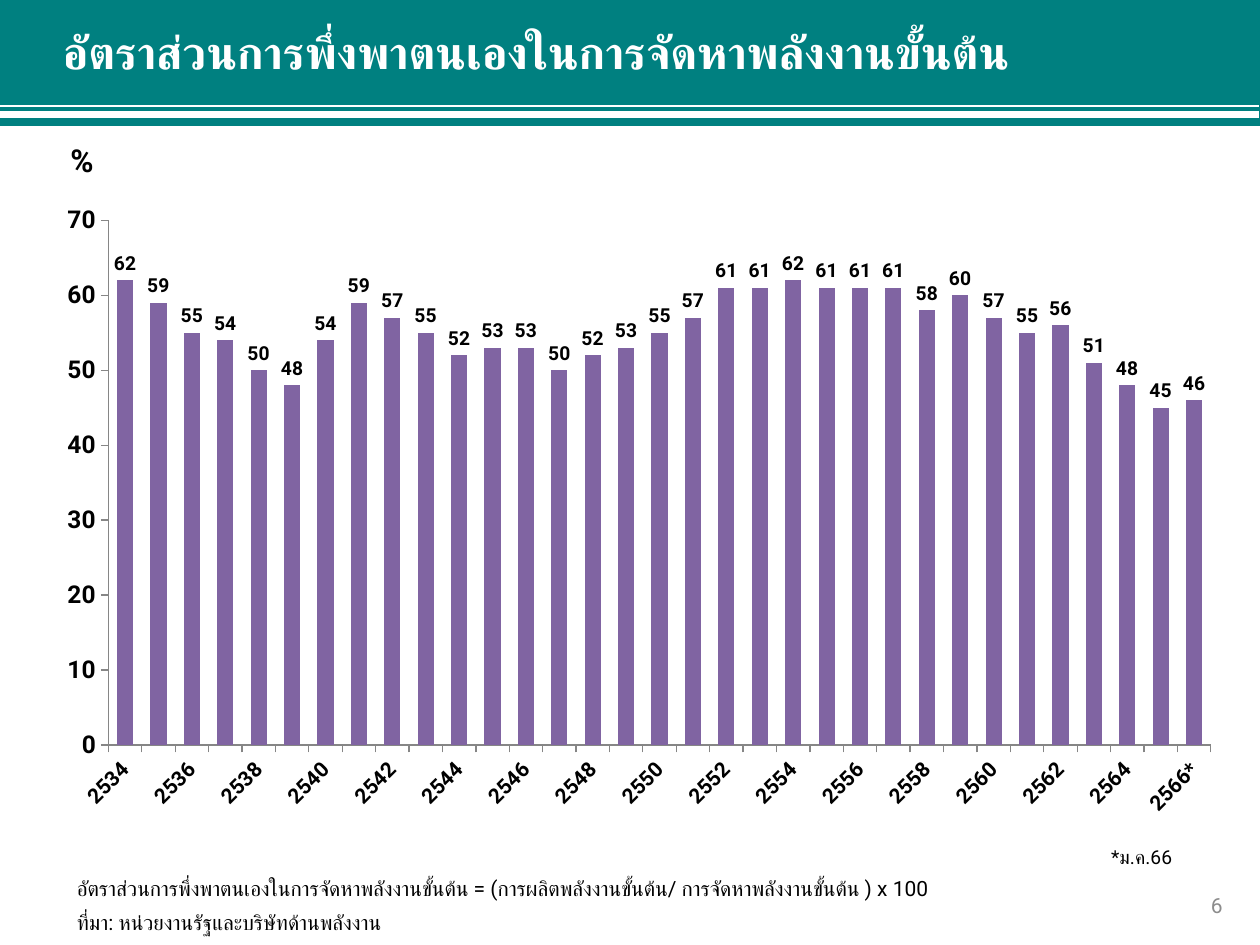
"""Build the slide on self-reliance in primary energy supply."""
from lxml import etree
from pptx import Presentation
from pptx.chart.data import CategoryChartData
from pptx.dml.color import RGBColor
from pptx.enum.chart import XL_CHART_TYPE as ChartType, XL_LABEL_POSITION as LabelPosition
from pptx.enum.chart import XL_TICK_MARK as TickMark
from pptx.enum.shapes import MSO_CONNECTOR as Connector, MSO_SHAPE as Shape
from pptx.enum.text import MSO_ANCHOR as Anchor, MSO_AUTO_SIZE as AutoSize, PP_ALIGN as Align
from pptx.oxml import parse_xml
from pptx.oxml.ns import nsdecls, qn
from pptx.util import Cm, Pt

COLORS = {"teal": "008080", "white": "FFFFFF", "black": "000000",
          "purple": "8064A2", "grey": "8C8C8C", "axis": "868686"}
FONT = "Roboto"


def color(name):
    return RGBColor.from_string(COLORS[name])


def style_font(font, size, name="black", bold=False):
    font.name = FONT
    font.size = Pt(size)
    font.bold = bold
    font.color.rgb = color(name)


presentation = Presentation()
presentation.slide_width = Cm(25.4)
presentation.slide_height = Cm(19.05)
slide = presentation.slides.add_slide(presentation.slide_layouts[6])

header = slide.shapes.add_group_shape()
band = header.shapes.add_shape(Shape.RECTANGLE, Cm(-0.08), Cm(-0.1), Cm(25.48), Cm(2.64))
band.shadow.inherit = False
band.fill.solid()
band.fill.fore_color.rgb = color("teal")
band.line.fill.background()
for y, width in ((2.31, 3.75), (2.13, 1.25)):
    stripe = header.shapes.add_connector(Connector.STRAIGHT, Cm(-0.08), Cm(y), Cm(25.37), Cm(y))
    stripe.line.color.rgb = color("white")
    stripe.line.width = Pt(width)
    etree.SubElement(stripe.element.spPr, qn("a:effectLst"))

ratios = [62, 59, 55, 54, 50, 48, 54, 59, 57, 55, 52, 53, 53, 50, 52, 53, 55,
          57, 61, 61, 62, 61, 61, 61, 58, 60, 57, 55, 56, 51, 48, 45, 46]
chart_data = CategoryChartData(number_format="#,##0")
chart_data.categories = [str(year) for year in range(2534, 2566)] + ["2566*"]
chart_data.add_series("Series 1", ratios)
chart = slide.shapes.add_chart(
    ChartType.COLUMN_CLUSTERED, Cm(0.89), Cm(3.89), Cm(24), Cm(12.85), chart_data).chart
chart.has_legend = False
chart.has_title = False
chart.font.name = "Calibri"
chart.font.size = Pt(18)
chart.font.color.rgb = color("black")

for axis, size in ((chart.category_axis, 12), (chart.value_axis, 14)):
    axis.has_major_gridlines = False
    axis.major_tick_mark = TickMark.OUTSIDE
    axis.minor_tick_mark = TickMark.NONE
    axis.format.line.color.rgb = color("axis")
    style_font(axis.tick_labels.font, size, bold=True)
chart.value_axis.minimum_scale = 0
chart.value_axis.maximum_scale = 70
chart.value_axis.major_unit = 10
chart.value_axis.tick_labels.number_format = "#,##0"
chart.value_axis.tick_labels.number_format_is_linked = False

plot = chart.plots[0]
plot.gap_width = 106
plot.vary_by_categories = False
series = plot.series[0]
series.format.fill.solid()
series.format.fill.fore_color.rgb = color("purple")
labels = series.data_labels
labels.show_value = True
labels.number_format = "#,##0"
labels.number_format_is_linked = False
labels.position = LabelPosition.OUTSIDE_END
style_font(labels.font, 11, bold=True)

category_axis = chart.element.find(".//" + qn("c:catAx"))
category_axis.find(qn("c:txPr")).find(qn("a:bodyPr")).set("rot", "-2700000")
category_axis.find(qn("c:noMultiLvlLbl")).addprevious(
    parse_xml(f'<c:tickLblSkip {nsdecls("c")} val="2"/>'))
plot_area = chart.element.find(".//" + qn("c:plotArea"))
for layout in plot_area.findall(qn("c:layout")):
    plot_area.remove(layout)
layout = etree.Element(qn("c:layout"))
manual = etree.SubElement(layout, qn("c:manualLayout"))
for tag, value in (("layoutTarget", "inner"), ("xMode", "edge"), ("yMode", "edge"),
                   ("x", 0.054), ("y", 0.043), ("w", 0.926), ("h", 0.823)):
    etree.SubElement(manual, qn(f"c:{tag}")).set("val", str(value))
plot_area.insert(0, layout)

title = "อัตราส่วนการพึ่งพาตนเองในการจัดหาพลังงานขั้นต้น"
formula = f"{title} = (การผลิตพลังงานขั้นต้น/ การจัดหาพลังงานขั้นต้น ) x 100"
sources = "ที่มา: หน่วยงานรัฐและบริษัทด้านพลังงาน"
texts = [
    (title, (1.02, -0.03, 22.3, 2.13), 25.9, "white", True, Align.LEFT, Anchor.MIDDLE, True),
    ("%", (0.41, 2.72, 2.49, 1.02), 18, "black", True, Align.CENTER, Anchor.TOP, True),
    (formula, (1.3, 17.53, 20.8, 0.76), 12, "black", False, Align.LEFT, Anchor.TOP, True),
    (sources, (1.3, 18.21, 8.61, 0.76), 12, "black", False, Align.LEFT, Anchor.TOP, False),
    ("6", (23.55, 17.78, 1.35, 0.94), 12, "grey", False, Align.RIGHT, Anchor.MIDDLE, True),
    ("*ม.ค.66", (22.15, 16.92, 1.88, 0.74), 11, "black", False, Align.LEFT, Anchor.TOP, False),
]
for text, place, size, name, bold, align, anchor, wrap in texts:
    text_frame = slide.shapes.add_textbox(*map(Cm, place)).text_frame
    text_frame.text = text
    text_frame.word_wrap = wrap
    text_frame.vertical_anchor = anchor
    text_frame.auto_size = AutoSize.SHAPE_TO_FIT_TEXT if anchor == Anchor.TOP else AutoSize.NONE
    paragraph = text_frame.paragraphs[0]
    paragraph.alignment = align
    style_font(paragraph.runs[0].font, size, name, bold)

presentation.save("out.pptx")
